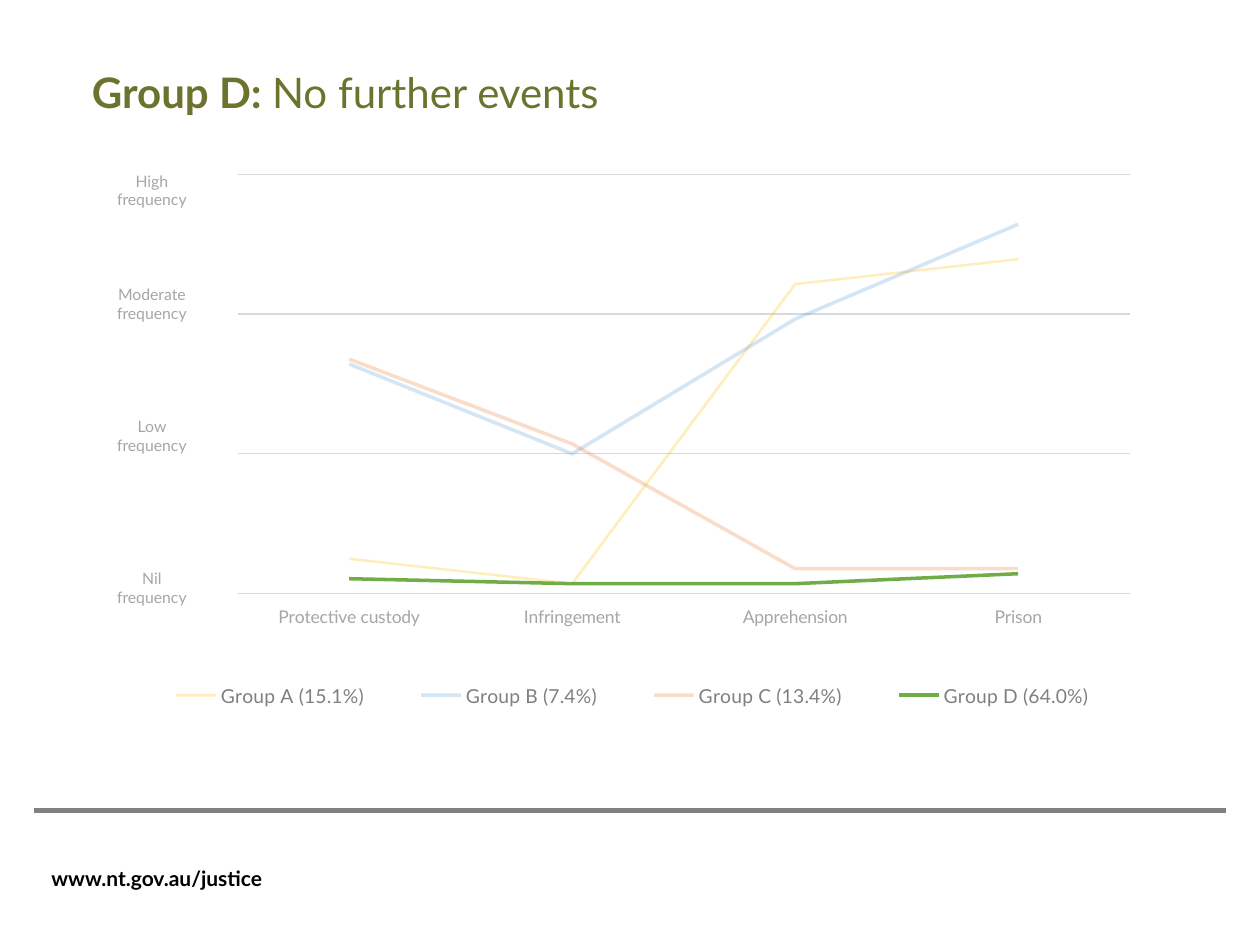
from lxml import etree
from pptx import Presentation
from pptx.chart.data import CategoryChartData
from pptx.dml.color import RGBColor
from pptx.enum.chart import XL_CHART_TYPE as ChartType, XL_LEGEND_POSITION as LegendPos
from pptx.enum.chart import XL_TICK_LABEL_POSITION as LabelPos, XL_TICK_MARK as Tick
from pptx.enum.shapes import MSO_CONNECTOR as Connector
from pptx.enum.text import MSO_ANCHOR as Anchor, PP_ALIGN as Align
from pptx.oxml import parse_xml
from pptx.oxml.ns import nsdecls, qn
from pptx.util import Inches, Pt

FONT = "Lato"
OLIVE = RGBColor(0x6B, 0x73, 0x2F)
BLACK = RGBColor(0, 0, 0)
GREY = RGBColor(0x80, 0x80, 0x80)
LABEL_GREY = RGBColor(0xA6, 0xA6, 0xA6)
GRID_GREY = RGBColor(0xD9, 0xD9, 0xD9)
YELLOW = RGBColor(0xFF, 0xC0, 0x00)
BLUE = RGBColor(0x5B, 0x9B, 0xD5)
ORANGE = RGBColor(0xED, 0x7D, 0x31)
GREEN = RGBColor(0x70, 0xAD, 0x47)

STAGES = ["Protective custody", "Infringement", "Apprehension", "Prison"]
# name, values, colour, line width, opacity in percent
GROUPS = [
    ("Group A (15.1%)", (33, 28, 88, 93), YELLOW, 1.5, 25),
    ("Group B (7.4%)", (72, 54, 81, 100), BLUE, 2, 25),
    ("Group C (13.4%)", (73, 56, 31, 31), ORANGE, 2, 25),
    ("Group D (64.0%)", (29, 28, 28, 30), GREEN, 2, 100),
]
# frequency level and the gap above it, in lines of text
LEVELS = [("High", 0), ("Moderate", 4), ("Low", 5), ("Nil", 6)]
LABEL_LINE = 10.8


def set_font(font, size, color, bold=False):
    font.name, font.size, font.bold = FONT, Pt(size), bold
    font.color.rgb = color


def write(paragraph, text, size=12, color=BLACK, bold=False, align=Align.LEFT, before=0):
    """Add one formatted run to a paragraph."""
    paragraph.alignment = align
    if before:
        paragraph.space_before = Pt(before)
    run = paragraph.add_run()
    run.text = text
    set_font(run.font, size, color, bold)


def add_box(slide, left, top, width, height):
    frame = slide.shapes.add_textbox(*map(Inches, (left, top, width, height))).text_frame
    frame.word_wrap = True
    return frame


def add_title(slide):
    title = slide.shapes.title
    title.left, title.top, title.width, title.height = map(Inches, (0.63, 0.6, 8.58, 0.42))
    title.text_frame.vertical_anchor = Anchor.TOP
    heading = title.text_frame.paragraphs[0]
    heading.line_spacing = Pt(20)
    write(heading, "Group D: ", size=24, color=OLIVE, bold=True)
    write(heading, "No further events", size=24, color=OLIVE)


def add_footer(slide):
    rule = slide.shapes.add_connector(
        Connector.STRAIGHT, *map(Inches, (0.27, 6.43, 9.73, 6.43)))
    rule.line.color.rgb, rule.line.width = GREY, Pt(3)
    etree.SubElement(rule._element.spPr, qn("a:effectLst"))
    address = add_box(slide, 0.31, 6.82, 5.67, 0.3)
    write(address.paragraphs[0], "www.nt.gov.au/justice", bold=True)


def place(parent, layout, inner=False):
    """Give a plot area or legend a fixed place, as fractions of the chart."""
    for old in parent.findall(qn("c:layout")):
        parent.remove(old)
    target = '<c:layoutTarget val="inner"/>' if inner else ""
    modes = '<c:xMode val="edge"/><c:yMode val="edge"/>'
    sizes = "".join(f'<c:{key} val="{value}"/>' for key, value in zip("xywh", layout))
    node = parse_xml(f'<c:layout {nsdecls("c")}><c:manualLayout>{target}{modes}{sizes}'
                     "</c:manualLayout></c:layout>")
    parent.insert(0 if inner else 1, node)


def style_axes(chart):
    stage_axis, level_axis = chart.category_axis, chart.value_axis
    stage_axis.major_tick_mark = stage_axis.minor_tick_mark = Tick.NONE
    stage_axis.tick_label_position = LabelPos.LOW
    set_font(stage_axis.tick_labels.font, 10, LABEL_GREY)
    level_axis.minimum_scale, level_axis.maximum_scale = 26, 110
    level_axis.major_unit = 28
    level_axis.visible = False
    level_axis.has_major_gridlines = True
    for line in (stage_axis.format.line, level_axis.major_gridlines.format.line):
        line.color.rgb, line.width = GRID_GREY, Pt(0.75)


def style_series(series, color, width, opacity):
    series.smooth = False
    line = series.format.line
    line.color.rgb, line.width = color, Pt(width)
    if opacity < 100:
        shade = line._ln.find(".//" + qn("a:srgbClr"))
        etree.SubElement(shade, qn("a:alpha")).set("val", str(opacity * 1000))


def add_group_chart(slide):
    data = CategoryChartData()
    data.categories = STAGES
    for name, values, *_ in GROUPS:
        data.add_series(name, values)
    area = map(Inches, (0.83, 1.12, 8.38, 4.63))
    chart = slide.shapes.add_chart(ChartType.LINE, *area, data).chart
    set_font(chart.font, 10, BLACK)
    chart.has_title = False
    chart.plots[0].vary_by_categories = False
    style_axes(chart)
    for series, (_, _, color, width, opacity) in zip(chart.series, GROUPS):
        style_series(series, color, width, opacity)
    chart.has_legend = True
    legend = chart.legend
    legend.position, legend.include_in_layout = LegendPos.BOTTOM, False
    set_font(legend.font, 11, GREY)
    place(chart._chartSpace.chart.plotArea, (0.126, 0.057, 0.845, 0.719), inner=True)
    place(legend._element, (0.02, 0.91, 0.96, 0.08))


def add_level_labels(slide):
    labels = add_box(slide, 0.75, 1.31, 0.91, 3.72)
    for index, (level, gap) in enumerate(LEVELS):
        paragraph = labels.add_paragraph() if index else labels.paragraphs[0]
        write(paragraph, f"{level} frequency", size=9, color=LABEL_GREY,
              align=Align.CENTER, before=gap * LABEL_LINE)


def main():
    deck = Presentation()
    deck.slide_width, deck.slide_height = Inches(10), Inches(7.5)
    slide = deck.slides.add_slide(deck.slide_layouts[5])
    add_footer(slide)
    add_title(slide)
    add_group_chart(slide)
    add_level_labels(slide)
    deck.save("out.pptx")


if __name__ == "__main__":
    main()
